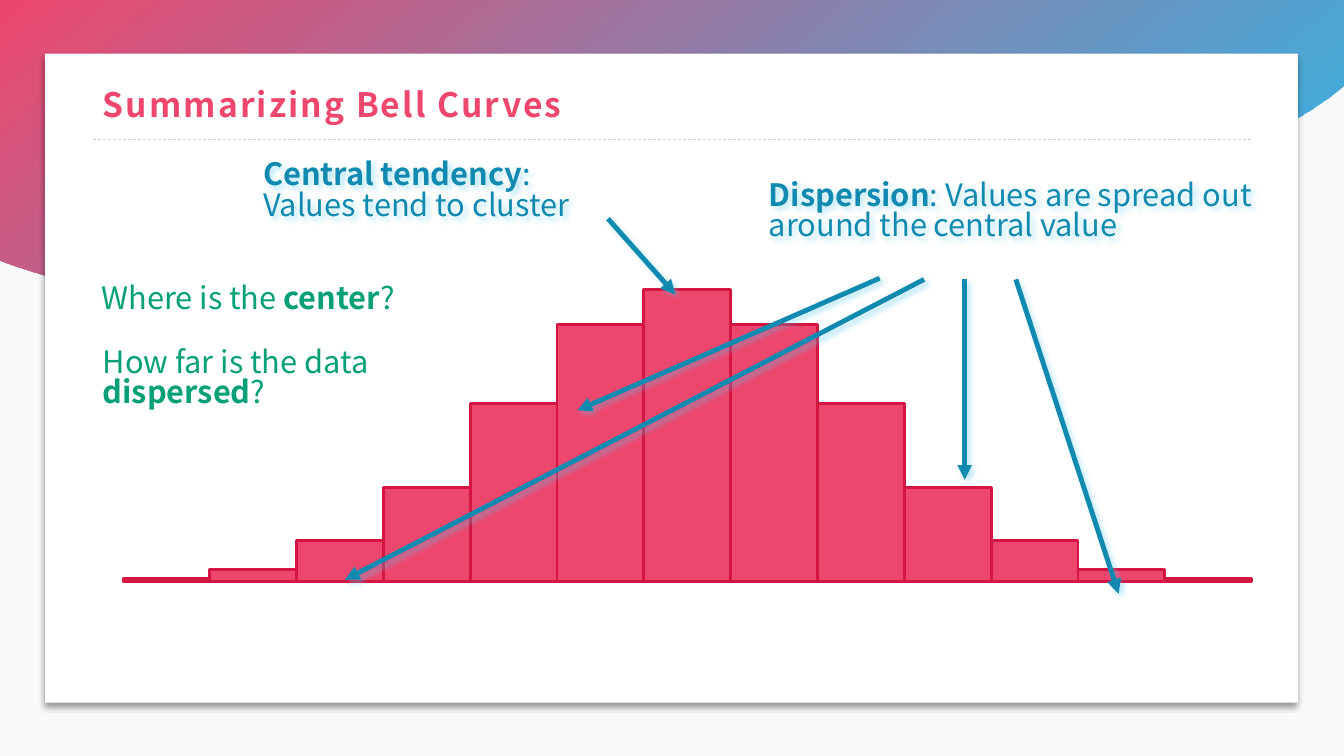
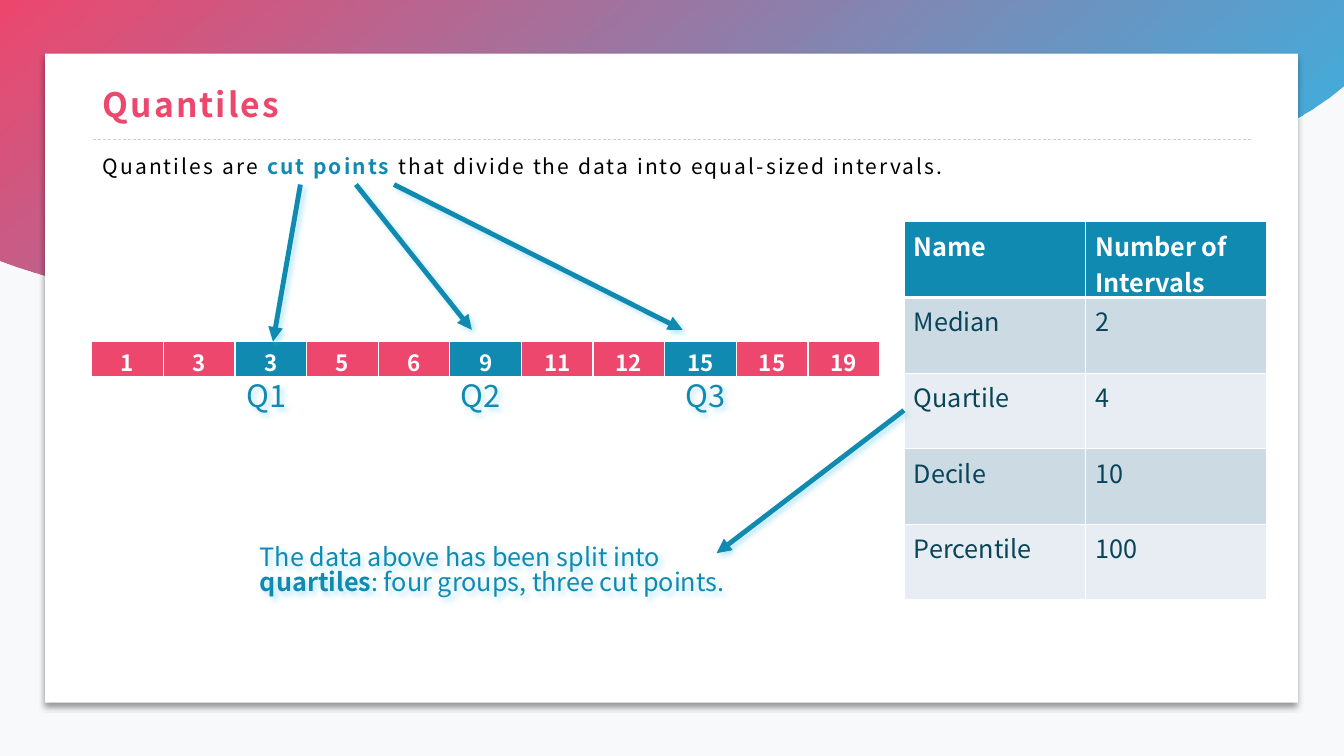
"""Builds two statistics slides: bell curve summaries and quantiles."""
from dataclasses import dataclass

from lxml.etree import SubElement
from pptx import Presentation
from pptx.chart.data import CategoryChartData
from pptx.dml.color import RGBColor
from pptx.enum.chart import XL_CHART_TYPE
from pptx.enum.dml import MSO_LINE
from pptx.enum.shapes import MSO_CONNECTOR, MSO_SHAPE
from pptx.enum.text import MSO_ANCHOR, MSO_AUTO_SIZE, PP_ALIGN
from pptx.oxml.ns import qn
from pptx.util import Cm, Pt


@dataclass(frozen=True)
class Theme:
    font: str = "Noto Sans CJK JP"
    pink: str = "EE476E"
    crimson: str = "D41441"
    sky: str = "16B3E8"
    teal: str = "118AB1"
    glow: str = "52C8EE"
    green: str = "05A077"
    navy: str = "084559"
    black: str = "000000"
    white: str = "FFFFFF"
    backdrop: str = "F8F9FB"
    rule: str = "D0CECE"
    band_dark: str = "CCDAE4"
    band_light: str = "E7EDF2"
    title: int = 24
    callout: int = 22
    table: int = 18
    strip: int = 16
    body: int = 15
    tight: float = 0.83


THEME = Theme()

WAVE_START = (0, 6.55)
WAVE_CURVES = [
    ((3.1, 7.72), (6.76, 7.9), (9.98, 6.96)),
    ((13.46, 5.97), (16.46, 3.84), (20.12, 3.45)),
    ((23.77, 3.07), (27.64, 4.57), (31.17, 3.61)),
    ((32.18, 3.33), (33.07, 2.82), (33.87, 2.16)),
]

BELL_HALF = [1, 4, 14, 32, 61, 88]
BELL_VALUES = BELL_HALF + [100] + BELL_HALF[::-1]
BELL_CALLOUTS = [
    ((6.38, 3.94, 10.54, 2.13),
     [("Central tendency", True), (":\nValues tend to cluster", False)]),
    ((19.13, 4.45, 12.98, 2.13),
     [("Dispersion", True), (": Values are spread out around the central value", False)]),
]
BELL_QUESTIONS = [
    ((2.31, 7.06, 10.74, 1.19),
     [("Where is the ", False), ("center", True), ("?", False)]),
    ((2.34, 8.66, 10.26, 2.13),
     [("How far is the data ", False), ("dispersed", True), ("?", False)]),
]
BELL_ARROWS = [
    (15.32, 5.51, 17.02, 7.42),
    (24.31, 7.04, 24.31, 12.09),
    (23.29, 7.04, 8.69, 14.61),
    (25.6, 7.04, 28.19, 14.96),
    (22.17, 7.01, 14.55, 10.34),
]

QUANTILE_INTRO = [
    ("Quantiles are ", False, THEME.black),
    ("cut points ", True, THEME.teal),
    ("that divide the data into equal-sized intervals.", False, THEME.black),
]
INTERVALS = [
    ("Name", "Number of Intervals"),
    ("Median", "2"),
    ("Quartile", "4"),
    ("Decile", "10"),
    ("Percentile", "100"),
]
OBSERVATIONS = [1, 3, 3, 5, 6, 9, 11, 12, 15, 15, 19]
CUT_POSITIONS = {2, 5, 8}
CUT_LABELS = [("Q1", 5.97), ("Q2", 11.35), ("Q3", 17.02)]
QUARTILE_NOTE = [
    ("The data above has been split into ", False),
    ("quartiles", True),
    (": four groups, three cut points.", False),
]
QUANTILE_ARROWS = [
    (7.57, 4.65, 6.88, 8.61),
    (8.97, 4.65, 11.89, 8.31),
    (9.93, 4.65, 17.2, 8.31),
    (22.78, 10.34, 18.06, 13.94),
]


def rgb(colour):
    return RGBColor.from_string(colour)


def lengths(values):
    return [Cm(value) for value in values]


def cast_shadow(shape, colour, angle):
    effects = SubElement(shape.element.spPr, qn("a:effectLst"))
    shadow = SubElement(effects, qn("a:outerShdw"), blurRad=str(Pt(4)),
                        dist=str(Pt(3)), dir=str(angle * 60000), algn="tl", rotWithShape="0")
    tint = SubElement(shadow, qn("a:srgbClr"), val=colour)
    SubElement(tint, qn("a:alpha"), val="40000")


def write_run(para, text, size, colour, bold):
    for index, part in enumerate(text.split("\n")):
        if index:
            para.add_line_break()
        span = para.add_run()
        span.text = part
        span.font.name = THEME.font
        span.font.size = Pt(size)
        span.font.bold = bold
        span.font.color.rgb = rgb(colour)


def add_text(page, place, runs, size, colour=THEME.teal, spacing=THEME.tight,
             glowing=False, tracked=False):
    box = page.shapes.add_textbox(*lengths(place))
    frame = box.text_frame
    frame.word_wrap = True
    para = frame.paragraphs[0]
    para.line_spacing = spacing
    for text, bold, *own_colour in runs:
        write_run(para, text, size, own_colour[0] if own_colour else colour, bold)
    if tracked:
        for properties in box.element.iter(qn("a:rPr")):
            properties.set("spc", "150")
    else:
        frame.auto_size = MSO_AUTO_SIZE.SHAPE_TO_FIT_TEXT
    if glowing:
        cast_shadow(box, THEME.glow, 45)
    return box


def add_line(page, ends, colour, width):
    line = page.shapes.add_connector(MSO_CONNECTOR.STRAIGHT, *lengths(ends))
    line.line.color.rgb = rgb(colour)
    line.line.width = Pt(width)
    return line


def add_arrows(page, arrows):
    for ends in arrows:
        arrow = add_line(page, ends, THEME.teal, 3.5)
        SubElement(arrow.element.spPr.find(qn("a:ln")), qn("a:tailEnd"), type="triangle")
        cast_shadow(arrow, THEME.glow, 45)


def curve_points(start, curves, steps=24):
    points = [start]
    for first, second, end in curves:
        begin = points[-1]
        for step in range(1, steps + 1):
            t = step / steps
            weights = ((1 - t) ** 3, 3 * t * (1 - t) ** 2, 3 * t * t * (1 - t), t ** 3)
            points.append(tuple(
                sum(weight * point[axis] for weight, point in zip(weights, (begin, first, second, end)))
                for axis in (0, 1)))
    return points


def add_wave(page):
    outline = curve_points(WAVE_START, WAVE_CURVES) + [(33.87, 0)]
    builder = page.shapes.build_freeform(0, 0)
    builder.add_line_segments([lengths(point) for point in outline], close=True)
    wave = builder.convert_to_shape()
    wave.shadow.inherit = False
    wave.line.fill.background()
    wave.fill.gradient()
    wave.fill.gradient_angle = 310
    for stop, colour, position in zip(wave.fill.gradient_stops, (THEME.pink, THEME.sky), (0, 1)):
        stop.color.rgb = rgb(colour)
        stop.position = position
    tints = list(wave.element.spPr.iter(qn("a:srgbClr")))
    SubElement(tints[-1], qn("a:alpha"), val="90000")
    return wave


def add_card(page):
    card = page.shapes.add_shape(MSO_SHAPE.RECTANGLE, *lengths((1.14, 1.35, 31.57, 16.36)))
    card.fill.solid()
    card.fill.fore_color.rgb = rgb(THEME.white)
    card.line.fill.background()
    cast_shadow(card, THEME.black, 90)
    return card


def add_rule(page):
    rule = add_line(page, (2.34, 3.51, 31.57, 3.51), THEME.rule, 0.5)
    rule.line.dash_style = MSO_LINE.DASH
    SubElement(rule.element.spPr, qn("a:effectLst"))
    return rule


def furnish_layout(layout, page):
    fill = layout.background.fill
    fill.solid()
    fill.fore_color.rgb = rgb(THEME.backdrop)
    for part in (add_wave(page), add_card(page), add_rule(page)):
        layout.shapes.element.append(part.element)


def add_title(page, text):
    box = add_text(page, (2.34, 1.88, 29.21, 1.63), [(text, True)], THEME.title,
                   THEME.pink, spacing=0.9, tracked=True)
    box.text_frame.vertical_anchor = MSO_ANCHOR.MIDDLE


def add_bell_chart(page):
    data = CategoryChartData()
    data.categories = [str(number + 1) for number in range(len(BELL_VALUES))]
    data.add_series("Series 1", BELL_VALUES)
    chart = page.shapes.add_chart(XL_CHART_TYPE.COLUMN_CLUSTERED,
                                  *lengths((2.34, 3.51, 29.24, 13.64)), data).chart
    chart.has_legend = False
    chart.has_title = False
    chart.font.name = THEME.font
    chart.font.size = Pt(10)
    chart.font.color.rgb = rgb(THEME.black)
    chart.value_axis.minimum_scale = 0
    chart.value_axis.maximum_scale = 150
    chart.value_axis.has_major_gridlines = False
    chart.category_axis.visible = chart.value_axis.visible = False
    plot = chart.plots[0]
    plot.vary_by_categories = False
    plot.gap_width = 0
    plot.overlap = -27
    style = plot.series[0].format
    style.fill.solid()
    style.fill.fore_color.rgb = rgb(THEME.pink)
    style.line.color.rgb = rgb(THEME.crimson)
    style.line.width = Pt(2)
    area = chart.element.find(".//" + qn("c:plotArea"))
    for old_layout in area.findall(qn("c:layout")):
        area.remove(old_layout)
    layout = SubElement(area, qn("c:layout"))
    area.insert(0, layout)
    manual = SubElement(layout, qn("c:manualLayout"))
    for tag, value in (("layoutTarget", "inner"), ("xMode", "edge"), ("yMode", "edge"),
                       ("x", "0.026"), ("y", "0.007"), ("w", "0.974"), ("h", "0.81")):
        SubElement(manual, qn("c:" + tag), val=value)


def add_grid(page, place, rows, size, align=PP_ALIGN.LEFT, margins=(0.25, 0.13)):
    row_count, column_count = len(rows), len(rows[0])
    holder = page.shapes.add_table(row_count, column_count, *lengths(place))
    grid = holder.table
    grid.first_row = grid.horz_banding = False
    cells = zip(grid.iter_cells(), holder.element.iter(qn("a:tc")))
    for index, (cell, node) in enumerate(cells):
        row, column = divmod(index, column_count)
        text, fill, colour, bold = rows[row][column]
        widths = {"lnL": 1, "lnR": 1, "lnT": 3 if row == 1 else 1, "lnB": 3 if row == 0 else 1}
        for side, width in widths.items():
            edge = SubElement(node.get_or_add_tcPr(), qn("a:" + side), w=str(Pt(width)))
            SubElement(SubElement(edge, qn("a:solidFill")), qn("a:srgbClr"), val=THEME.white)
        cell.fill.solid()
        cell.fill.fore_color.rgb = rgb(fill)
        cell.margin_left = cell.margin_right = Cm(margins[0])
        cell.margin_top = cell.margin_bottom = Cm(margins[1])
        para = cell.text_frame.paragraphs[0]
        para.alignment = align
        write_run(para, text, size, colour, bold)


def fill_bell_page(page):
    add_title(page, "Summarizing Bell Curves")
    add_bell_chart(page)
    for place, runs in BELL_CALLOUTS:
        add_text(page, place, runs, THEME.callout, glowing=True)
    add_arrows(page, BELL_ARROWS)
    for place, runs in BELL_QUESTIONS:
        add_text(page, place, runs, THEME.callout, THEME.green)


def fill_quantile_page(page):
    add_title(page, "Quantiles")
    add_text(page, (2.34, 3.74, 29.24, 1), QUANTILE_INTRO, THEME.body, spacing=1.0, tracked=True)
    header, *body = INTERVALS
    rows = [[(text, THEME.teal, THEME.white, True) for text in header]]
    for index, texts in enumerate(body):
        band = THEME.band_light if index % 2 else THEME.band_dark
        rows.append([(text, band, THEME.navy, False) for text in texts])
    add_grid(page, (22.78, 5.59, 9.14, 9.53), rows, THEME.table)
    strip = [(str(value), THEME.teal if index in CUT_POSITIONS else THEME.pink, THEME.white, True)
             for index, value in enumerate(OBSERVATIONS)]
    add_grid(page, (2.31, 8.61, 19.86, 0.91), [strip], THEME.strip, PP_ALIGN.CENTER, (0.23, 0.1))
    add_arrows(page, QUANTILE_ARROWS)
    add_text(page, (6.3, 13.64, 13.39, 1.8), QUARTILE_NOTE, THEME.table, glowing=True)
    for label, left in CUT_LABELS:
        add_text(page, (left, 9.53, 1.75, 1.19), [(label, False)], THEME.callout, glowing=True)


def main():
    deck = Presentation()
    deck.slide_width, deck.slide_height = Cm(33.87), Cm(19.05)
    blank = deck.slide_layouts[6]
    pages = [deck.slides.add_slide(blank) for _ in range(2)]
    furnish_layout(blank, pages[0])
    fill_bell_page(pages[0])
    fill_quantile_page(pages[1])
    deck.save("out.pptx")


if __name__ == "__main__":
    main()
